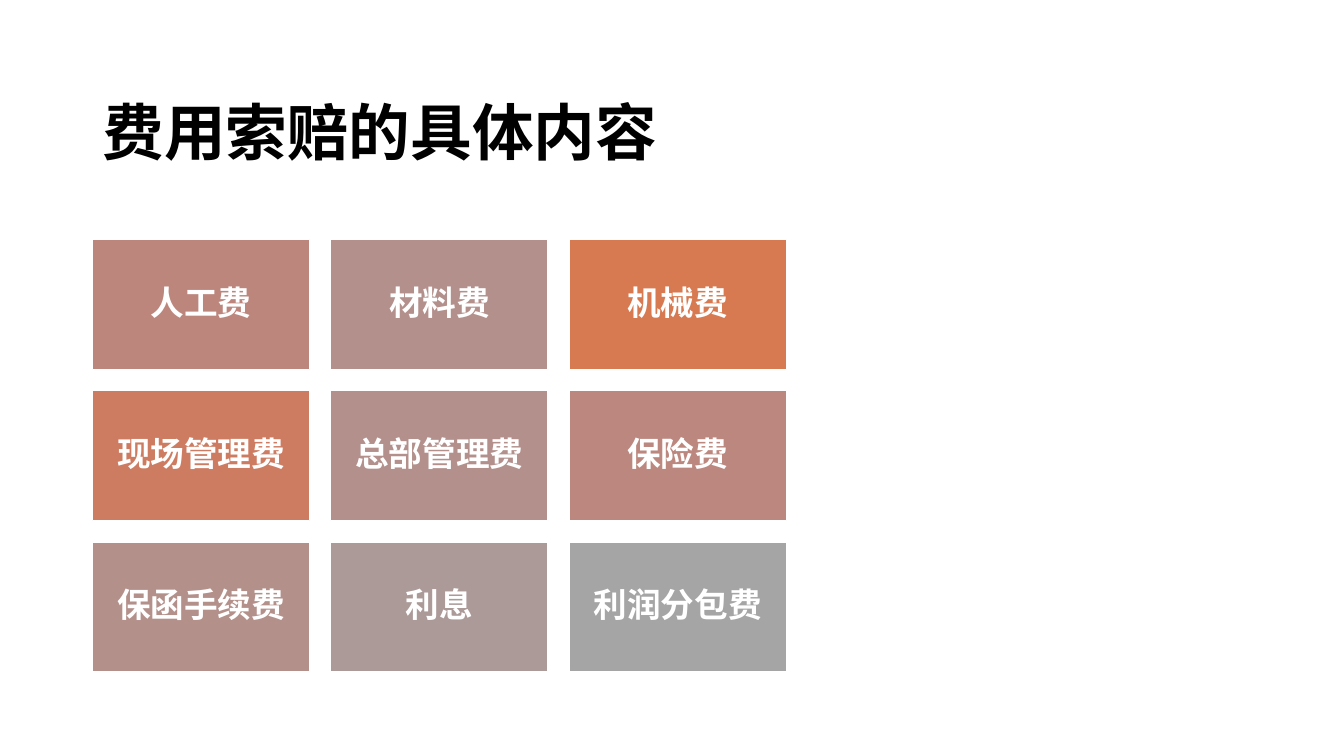
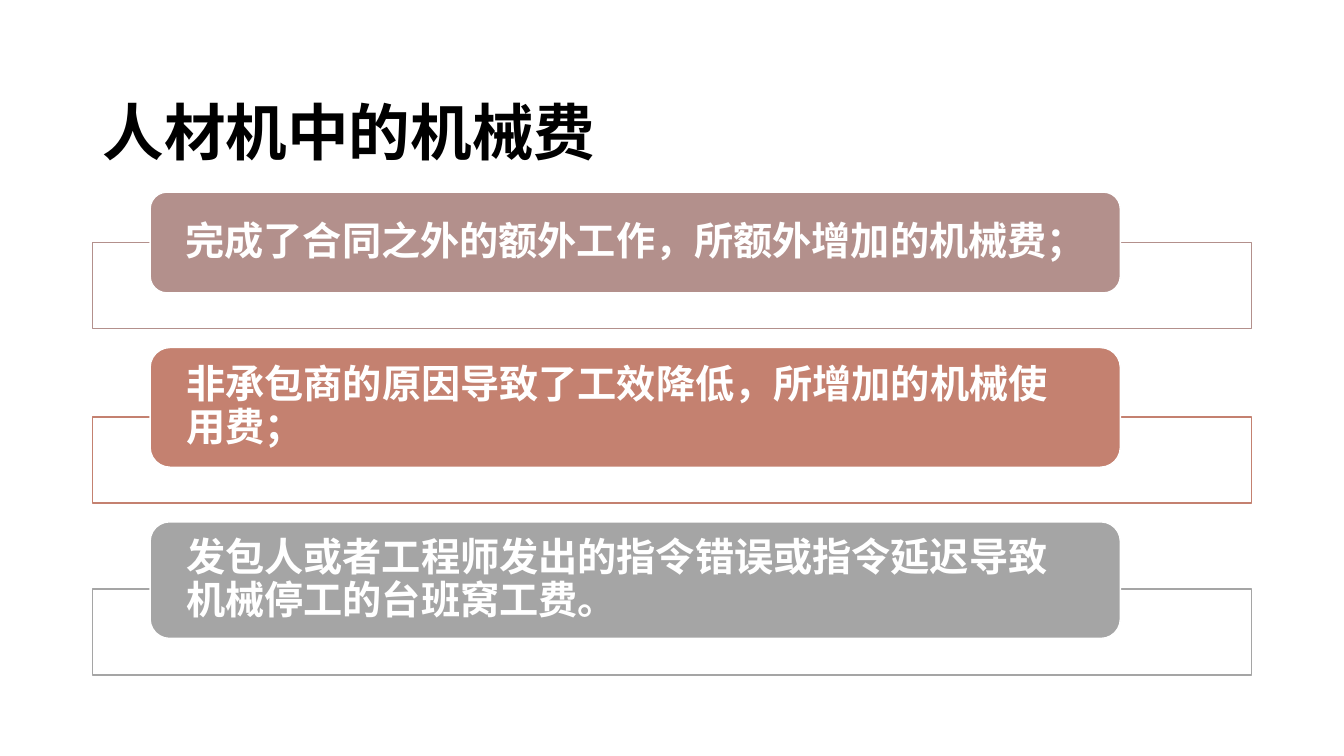
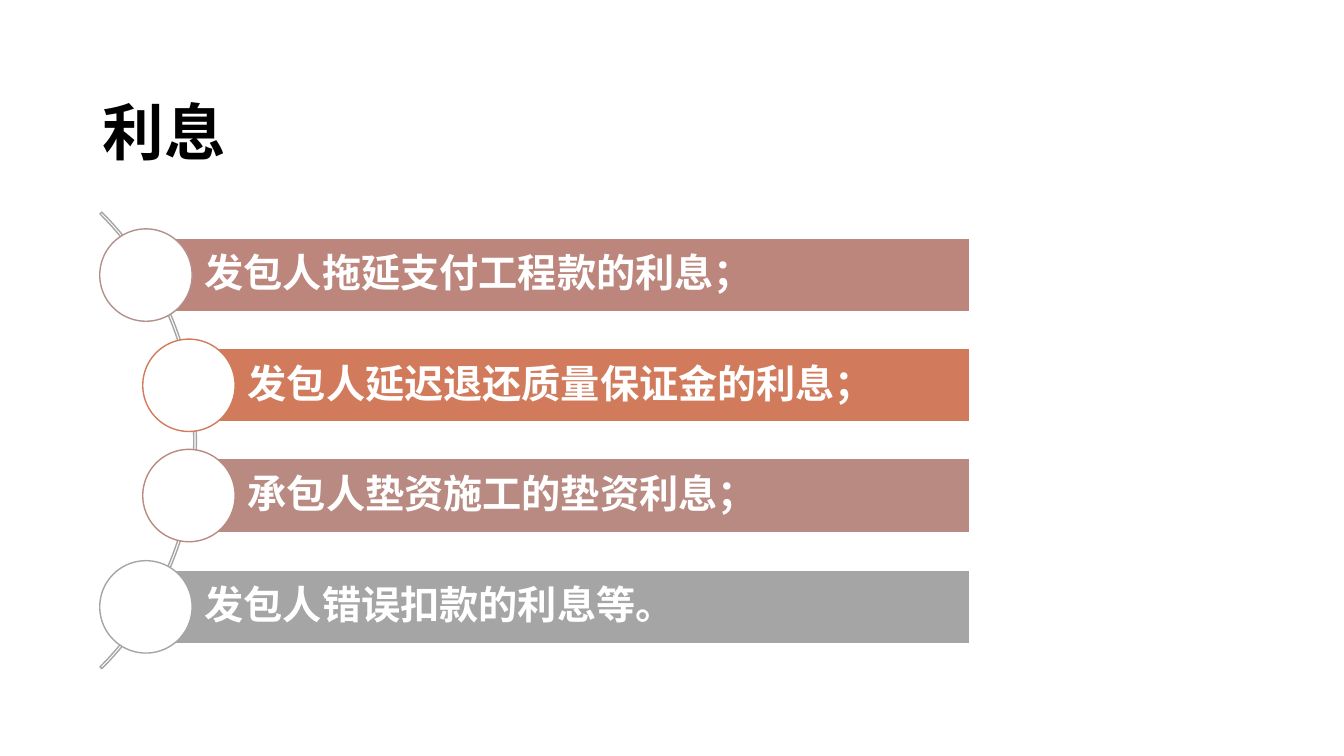
from dataclasses import dataclass

import pptx
import pptx.dml.color
import pptx.enum.shapes
import pptx.enum.text
import pptx.util

RGBColor = pptx.dml.color.RGBColor
MSO_SHAPE = pptx.enum.shapes.MSO_SHAPE
PP_ALIGN = pptx.enum.text.PP_ALIGN
MSO_ANCHOR = pptx.enum.text.MSO_ANCHOR

EMU_PER_PX = 9525
FONT = "Times New Roman"
BLACK = RGBColor(0x00, 0x00, 0x00)
WHITE = RGBColor(0xFF, 0xFF, 0xFF)
GREY = RGBColor(0xA5, 0xA5, 0xA5)
WARM_GREY = RGBColor(0xAC, 0x9A, 0x99)
MAUVE = RGBColor(0xB3, 0x90, 0x8C)
DUSTY_MAUVE = RGBColor(0xB4, 0x90, 0x8B)
DUSTY_ROSE = RGBColor(0xB9, 0x8A, 0x82)
ROSE = RGBColor(0xBC, 0x86, 0x7C)
SOFT_ROSE = RGBColor(0xBC, 0x87, 0x7E)
CLAY = RGBColor(0xC4, 0x81, 0x70)
TERRACOTTA = RGBColor(0xCE, 0x7C, 0x61)
COPPER = RGBColor(0xD1, 0x7B, 0x5C)
ORANGE = RGBColor(0xD8, 0x7A, 0x51)

LEFT, WIDTH = 88, 1104


@dataclass(frozen=True)
class Area:
    left: int
    top: int
    width: int
    height: int


@dataclass(frozen=True)
class Tile:
    text: str
    fill: RGBColor


@dataclass(frozen=True)
class Card:
    text: str
    color: RGBColor
    top: int
    height: int
    frame_top: int


@dataclass(frozen=True)
class Bar:
    text: str
    fill: RGBColor
    ring: RGBColor
    left: int


TILES = [
    Tile("人工费", ROSE),
    Tile("材料费", MAUVE),
    Tile("机械费", ORANGE),
    Tile("现场管理费", TERRACOTTA),
    Tile("总部管理费", MAUVE),
    Tile("保险费", SOFT_ROSE),
    Tile("保函手续费", DUSTY_MAUVE),
    Tile("利息", WARM_GREY),
    Tile("利润分包费", GREY),
]

CARDS = [
    Card("完成了合同之外的额外工作，所额外增加的机械费；", MAUVE, 183, 96, 231),
    Card("非承包商的原因导致了工效降低，所增加的机械使用费；", CLAY, 331, 114, 397),
    Card("发包人或者工程师发出的指令错误或指令延迟导致机械停工的台班窝工费。",
         GREY, 497, 111, 561),
]

BARS = [
    Bar("发包人拖延支付工程款的利息；", ROSE, MAUVE, 139),
    Bar("发包人延迟退还质量保证金的利息；", COPPER, COPPER, 180),
    Bar("承包人垫资施工的垫资利息；", DUSTY_ROSE, DUSTY_ROSE, 180),
    Bar("发包人错误扣款的利息等。", GREY, GREY, 139),
]


def px(n: int) -> pptx.util.Emu:
    return pptx.util.Emu(n * EMU_PER_PX)


def place(sp, area: Area) -> None:
    sp.left, sp.top = px(area.left), px(area.top)
    sp.width, sp.height = px(area.width), px(area.height)


def write(sp, text: str, size: int, color: RGBColor, align: PP_ALIGN,
          spacing: float) -> None:
    tf = sp.text_frame
    tf.word_wrap = True
    tf.vertical_anchor = MSO_ANCHOR.MIDDLE
    p = tf.paragraphs[0]
    p.text = text
    p.alignment = align
    p.line_spacing = spacing
    p.font.name = FONT
    p.font.size = pptx.util.Pt(size)
    p.font.bold = True
    p.font.color.rgb = color


def set_insets(sp, left: int, top: int, right: int, bottom: int) -> None:
    tf = sp.text_frame
    tf.margin_left, tf.margin_top = px(left), px(top)
    tf.margin_right, tf.margin_bottom = px(right), px(bottom)


def add_shape(slide, kind: MSO_SHAPE, area: Area, fill: RGBColor | None,
              line: RGBColor = WHITE):
    sp = slide.shapes.add_shape(kind, 0, 0, 0, 0)
    place(sp, area)
    sp.shadow.inherit = False
    if fill is None:
        sp.fill.background()
    else:
        sp.fill.solid()
        sp.fill.fore_color.rgb = fill
    sp.line.color.rgb = line
    sp.line.width = pptx.util.Pt(1)
    return sp


def add_slide(prs, title: str):
    slide = prs.slides.add_slide(prs.slide_layouts[5])
    sp = slide.shapes.title
    place(sp, Area(LEFT, 38, WIDTH, 139))
    write(sp, title, 44, BLACK, PP_ALIGN.LEFT, 1.5)
    return slide


def draw_tiles(slide) -> None:
    columns, width, height, gap = 3, 207, 124, 20
    for i, tile in enumerate(TILES):
        row, column = divmod(i, columns)
        area = Area(LEFT + column * (width + gap), 228 + row * (height + gap),
                    width, height)
        sp = add_shape(slide, MSO_SHAPE.RECTANGLE, area, tile.fill)
        set_insets(sp, 10, 10, 10, 10)
        write(sp, tile.text, 24, WHITE, PP_ALIGN.CENTER, 0.9)


def draw_cards(slide) -> None:
    for card in CARDS:
        add_shape(slide, MSO_SHAPE.RECTANGLE,
                  Area(LEFT, card.frame_top, WIDTH, 82), WHITE, card.color)
        sp = add_shape(slide, MSO_SHAPE.ROUNDED_RECTANGLE,
                       Area(143, card.top, 924, card.height), card.color)
        set_insets(sp, 29, 0, 29, 0)
        write(sp, card.text, 28, WHITE, PP_ALIGN.LEFT, 0.9)


def draw_bars(slide) -> None:
    right, height, diameter = 924, 70, 88
    first_top, last_top = 227, 543
    arc = add_shape(slide, MSO_SHAPE.BLOCK_ARC, Area(-428, 112, 615, 615), None, GREY)
    for i, value in enumerate((189, 27, 0.004)):
        arc.adjustments[i] = value
    for i, bar in enumerate(BARS):
        top = first_top + i * (last_top - first_top) // (len(BARS) - 1)
        sp = add_shape(slide, MSO_SHAPE.RECTANGLE,
                       Area(bar.left, top, right - bar.left, height), bar.fill)
        set_insets(sp, 56, 8, 8, 8)
        write(sp, bar.text, 28, WHITE, PP_ALIGN.LEFT, 0.9)
        add_shape(slide, MSO_SHAPE.OVAL,
                  Area(bar.left - diameter // 2, top - (diameter - height) // 2,
                       diameter, diameter), WHITE, bar.ring)


def main() -> None:
    prs = pptx.Presentation()
    prs.slide_width, prs.slide_height = px(1280), px(720)
    draw_tiles(add_slide(prs, "费用索赔的具体内容"))
    draw_cards(add_slide(prs, "人材机中的机械费"))
    draw_bars(add_slide(prs, "利息"))
    prs.save("out.pptx")


if __name__ == "__main__":
    main()
